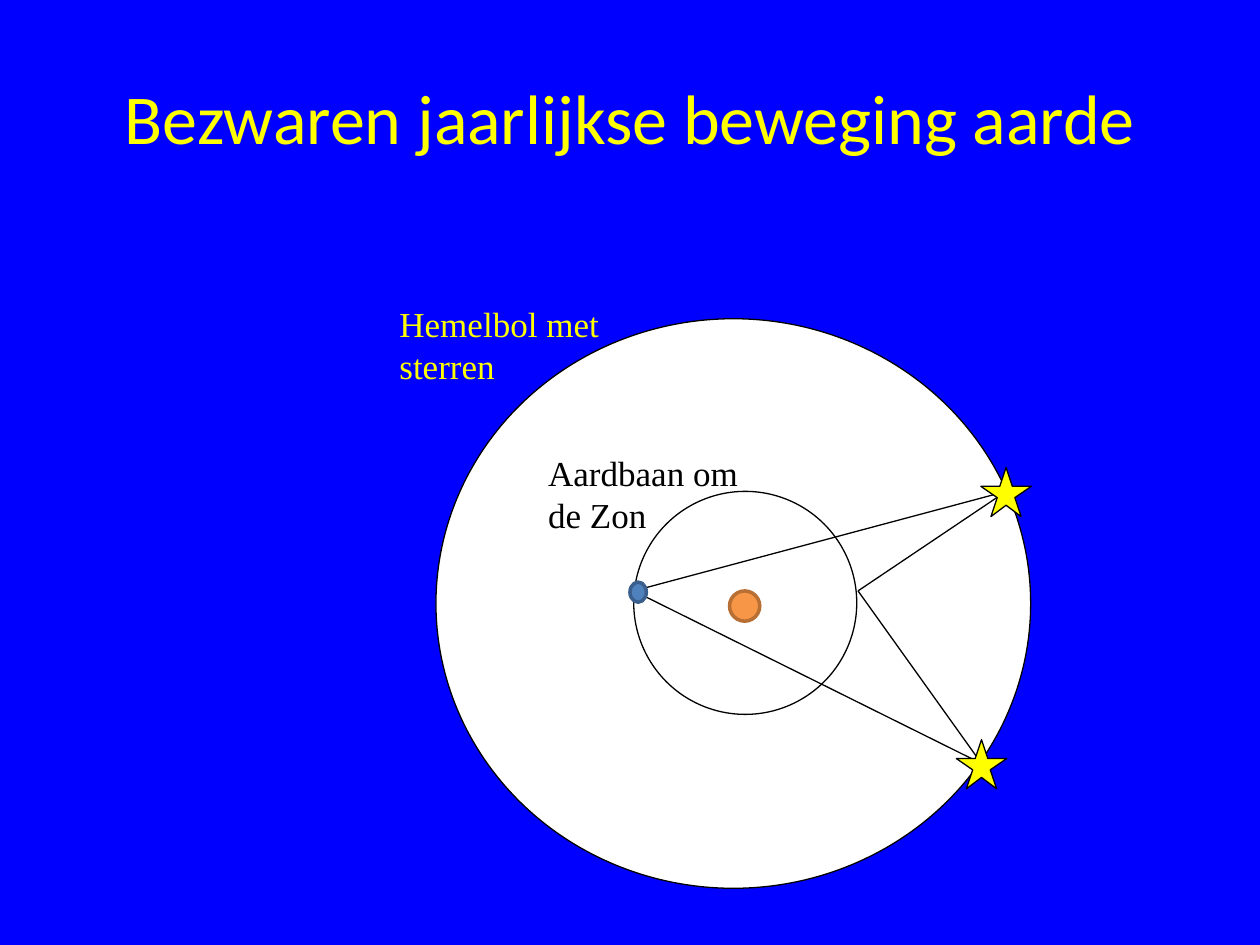
from lxml import etree
from pptx import Presentation
from pptx.dml.color import RGBColor
from pptx.enum.shapes import MSO_CONNECTOR, MSO_SHAPE
from pptx.enum.text import MSO_ANCHOR, MSO_AUTO_SIZE, PP_ALIGN
from pptx.oxml.ns import qn
from pptx.util import Inches, Pt

OVAL = MSO_SHAPE.OVAL
LINE = MSO_CONNECTOR.STRAIGHT
MIDDLE = MSO_ANCHOR.MIDDLE
CENTER = PP_ALIGN.CENTER
FIT = MSO_AUTO_SIZE.SHAPE_TO_FIT_TEXT

HUES = {
    "back": "0000FF", "yellow": "FFFF00", "white": "FFFFFF", "black": "000000",
    "sun": "F79646", "sunrim": "B76F34", "earth": "4F81BD", "rim": "3A5F8C",
}
TITLE = "Bezwaren jaarlijkse beweging aarde"
LABELS = [
    (3.17, 2.4, 1.66, "yellow", ["Hemelbol met", "sterren"]),
    (4.35, 3.58, 1.68, "black", ["Aardbaan om", "de Zon"]),
]
STEP = 0.335
SPHERES = [(3.46, 2.53, 4.72, 4.52), (5.03, 3.9, 1.77, 1.77)]
BODIES = [
    (5.79, 4.69, 0.24, 0.24, "sun", "sunrim"),
    (5, 4.62, 0.13, 0.16, "earth", "rim"),
]
VIEWS = [(6.81, 4.69), (5.03, 4.69)]
STARS = [(7.985, 3.9), (7.79, 6.06)]
HALF = [(0, -0.19), (0.05, -0.04), (0.2, -0.04), (0.07, 0.05), (0.12, 0.2)]
POINTS = HALF + [(0, 0.11)] + [(-x, y) for x, y in HALF[:0:-1]]


def color(name):
    return RGBColor.from_string(HUES[name])


def paint(shape, fill, edge, width):
    shape.shadow.inherit = False
    shape.fill.solid()
    shape.fill.fore_color.rgb = color(fill)
    shape.line.color.rgb = color(edge)
    shape.line.width = Pt(width)


def write(para, text, size, face, hue):
    run = para.add_run()
    run.text = text
    for key, value in {"size": Pt(size), "name": face}.items():
        setattr(run.font, key, value)
    run.font.color.rgb = color(hue)


def oval(slide, box, fill, edge, width):
    shape = slide.shapes.add_shape(OVAL, *map(Inches, box))
    paint(shape, fill, edge, width)


def sight(slide, start, end):
    line = slide.shapes.add_connector(LINE, *map(Inches, start + end))
    line.line.color.rgb = color("black")
    line.line.width = Pt(0.75)
    etree.SubElement(line._element.spPr, qn("a:effectLst"))


def star(slide, spot):
    dots = [(Inches(spot[0] + x), Inches(spot[1] + y)) for x, y in POINTS]
    build = slide.shapes.build_freeform(*dots[0])
    build.add_line_segments(dots[1:], close=True)
    paint(build.convert_to_shape(), "yellow", "black", 0.75)


def label(slide, left, top, width, hue, text):
    box = slide.shapes.add_textbox(*map(Inches, (left, top, width, 0.34)))
    style = {
        "margin_left": 0, "margin_right": 0, "margin_top": 0,
        "margin_bottom": 0, "word_wrap": False, "auto_size": FIT,
    }
    for key, value in style.items():
        setattr(box.text_frame, key, value)
    write(box.text_frame.paragraphs[0], text, 20, "Times New Roman", hue)


def main():
    deck = Presentation()
    deck.slide_width, deck.slide_height = Inches(10), Inches(7.5)
    slide = deck.slides.add_slide(deck.slide_layouts[5])
    slide.background.fill.solid()
    slide.background.fill.fore_color.rgb = color("back")

    title = slide.shapes.title
    place = {"left": 0.5, "top": 0.3, "width": 9, "height": 1.25}
    for key, value in place.items():
        setattr(title, key, Inches(value))
    title.text_frame.vertical_anchor = MIDDLE
    para = title.text_frame.paragraphs[0]
    para.alignment = CENTER
    write(para, TITLE, 40, "Calibri", "yellow")

    for box in SPHERES:
        oval(slide, box, "white", "black", 0.75)
    for end in STARS:
        for start in VIEWS:
            sight(slide, start, end)
    for spot in STARS:
        star(slide, spot)
    for left, top, width, hue, lines in LABELS:
        for row, text in enumerate(lines):
            label(slide, left, top + row * STEP, width, hue, text)
    for *box, fill, edge in BODIES:
        oval(slide, box, fill, edge, 2)

    deck.save("out.pptx")


if __name__ == "__main__":
    main()
